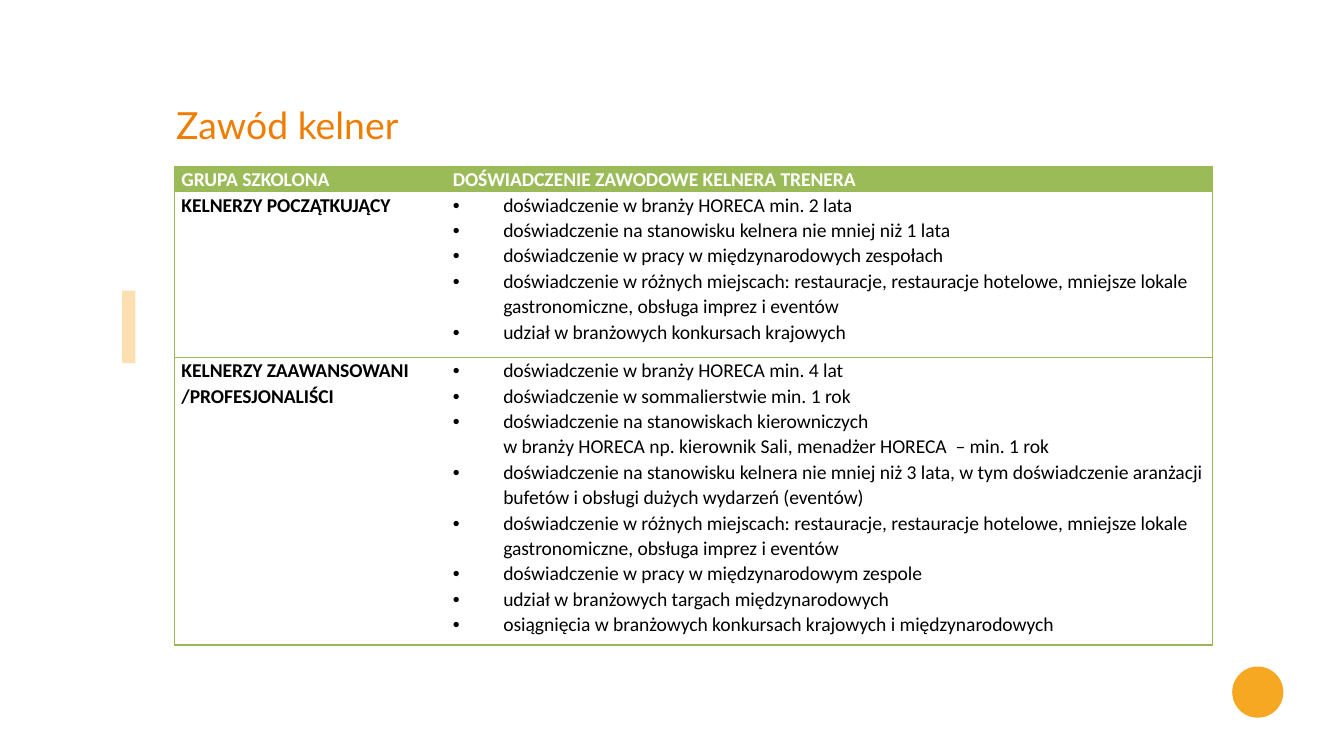
from dataclasses import dataclass

from lxml.etree import SubElement as Sub
from pptx import Presentation
from pptx.dml.color import RGBColor
from pptx.enum.shapes import MSO_SHAPE as Kind
from pptx.enum.text import MSO_ANCHOR as Anchor, MSO_AUTO_SIZE as Fit, PP_ALIGN as Align
from pptx.oxml.ns import qn
from pptx.util import Pt

ORANGE = RGBColor(0xEF, 0x7D, 0x00)
AMBER = RGBColor(0xF7, 0xA8, 0x23)
GREEN = RGBColor(0x98, 0xB9, 0x55)
LIME = RGBColor(0x9B, 0xBB, 0x59)
WHITE = RGBColor(0xFF, 0xFF, 0xFF)
BLACK = RGBColor(0x00, 0x00, 0x00)

VENUES = ("doświadczenie w różnych miejscach: restauracje, restauracje hotelowe, "
          "mniejsze lokale gastronomiczne, obsługa imprez i eventów")


@dataclass
class Mark:
    kind: Kind
    left: float
    top: float
    width: float
    height: float
    alpha: int = 100


@dataclass
class Group:
    name: str
    height: float
    items: list[str]


MARKS = [
    Mark(Kind.RECTANGLE, 65.4, 155.7, 7.2, 38.9, 35),
    Mark(Kind.OVAL, 660.1, 357.1, 27.4, 27.4),
]

GROUPS = [
    Group("KELNERZY POCZĄTKUJĄCY", 88.8, [
        "doświadczenie w branży HORECA min. 2 lata",
        "doświadczenie na stanowisku kelnera nie mniej niż 1 lata",
        "doświadczenie w pracy w międzynarodowych zespołach",
        VENUES,
        "udział w branżowych konkursach krajowych",
    ]),
    Group("KELNERZY ZAAWANSOWANI /PROFESJONALIŚCI", 154, [
        "doświadczenie w branży HORECA min. 4 lat",
        "doświadczenie w sommalierstwie min. 1 rok",
        "doświadczenie na stanowiskach kierowniczych \v"
        "w branży HORECA np. kierownik Sali, menadżer HORECA  – min. 1 rok",
        "doświadczenie na stanowisku kelnera nie mniej niż 3 lata, w tym "
        "doświadczenie aranżacji bufetów i obsługi dużych wydarzeń (eventów)",
        VENUES,
        "doświadczenie w pracy w międzynarodowym zespole",
        "udział w branżowych targach międzynarodowych",
        "osiągnięcia w branżowych konkursach krajowych i międzynarodowych",
    ]),
]


def draw_mark(slide, mark: Mark) -> None:
    shape = slide.shapes.add_shape(
        mark.kind, Pt(mark.left), Pt(mark.top), Pt(mark.width), Pt(mark.height))
    shape.shadow.inherit = False
    shape.line.fill.background()
    shape.fill.solid()
    shape.fill.fore_color.rgb = AMBER
    if mark.alpha < 100:
        tint = shape.fill._xPr.find(qn("a:solidFill"))[0]
        Sub(tint, qn("a:alpha"), val=str(mark.alpha * 1000))


def set_edges(cell, sides: str) -> None:
    props = cell._tc.get_or_add_tcPr()
    for side in "LRTB":
        line = Sub(props, qn(f"a:ln{side}"), w=str(Pt(0.75)))
        if side in sides:
            fill = Sub(line, qn("a:solidFill"))
            Sub(fill, qn("a:srgbClr"), val=str(GREEN))
        else:
            Sub(line, qn("a:noFill"))


def fill_cell(cell, lines: list[str], sides: str, back: RGBColor,
              color: RGBColor, bold: bool, dots: bool) -> None:
    set_edges(cell, sides)
    cell.fill.solid()
    cell.fill.fore_color.rgb = back
    cell.margin_left = cell.margin_right = Pt(3.6)
    cell.margin_top = cell.margin_bottom = Pt(0)
    frame = cell.text_frame
    for num, text in enumerate(lines):
        para = frame.add_paragraph() if num else frame.paragraphs[0]
        para.text = text
        para.line_spacing = 1.07
        if dots:
            props = para._p.get_or_add_pPr()
            props.set("marL", str(Pt(27)))
            props.set("indent", str(Pt(-27)))
            Sub(props, qn("a:buFont"), typeface="Arial")
            Sub(props, qn("a:buChar"), char="•")
        font = para.font
        font.name, font.size, font.bold = "Calibri", Pt(10.5), bold
        font.color.rgb = color


def draw_table(slide, groups: list[Group]) -> None:
    tall = 13.3 + sum(group.height for group in groups)
    table = slide.shapes.add_table(
        len(groups) + 1, 2, Pt(93.6), Pt(89.3), Pt(555.8), Pt(tall)).table
    table.first_row = table.horz_banding = False
    table.columns[0].width, table.columns[1].width = Pt(145.4), Pt(410.4)
    table.rows[0].height = Pt(13.3)
    heads = ["GRUPA SZKOLONA", "DOŚWIADCZENIE ZAWODOWE KELNERA TRENERA"]
    for col, head in enumerate(heads):
        fill_cell(table.cell(0, col), [head], "LR"[col] + "TB", LIME, WHITE, True, False)
    for row, group in enumerate(groups, 1):
        table.rows[row].height = Pt(group.height)
        fill_cell(table.cell(row, 0), [group.name], "LTB", WHITE, BLACK, True, False)
        fill_cell(table.cell(row, 1), group.items, "RTB", WHITE, BLACK, False, True)


def set_title(slide, text: str) -> None:
    title = slide.shapes.title
    title.left, title.top, title.width, title.height = Pt(87.1), Pt(51.1), Pt(573.1), Pt(31.7)
    frame = title.text_frame
    frame.text = text
    frame.word_wrap = True
    frame.auto_size = Fit.SHAPE_TO_FIT_TEXT
    frame.vertical_anchor = Anchor.MIDDLE
    para = frame.paragraphs[0]
    para.alignment = Align.LEFT
    para.font.name, para.font.size = "Lato", Pt(20)
    para.font.color.rgb = ORANGE


def main() -> None:
    deck = Presentation()
    deck.slide_width, deck.slide_height = Pt(720), Pt(405)
    slide = deck.slides.add_slide(deck.slide_layouts[5])
    for mark in MARKS:
        draw_mark(slide, mark)
    draw_table(slide, GROUPS)
    set_title(slide, "Zawód kelner")
    deck.save("out.pptx")


if __name__ == "__main__":
    main()
